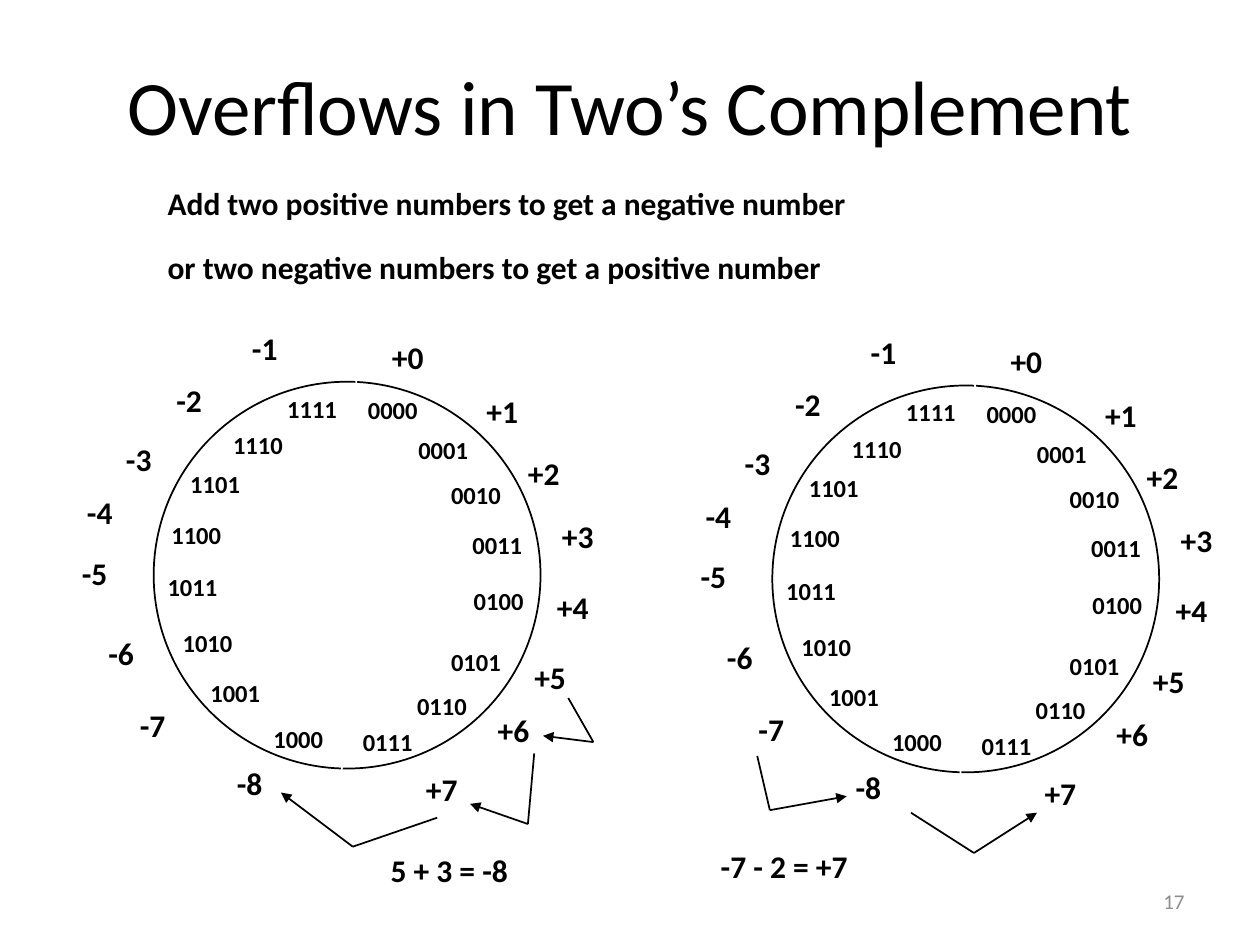
from itertools import pairwise

from lxml import etree
from pptx import Presentation
from pptx.dml.color import RGBColor
from pptx.enum.shapes import MSO_CONNECTOR, MSO_SHAPE
from pptx.enum.text import MSO_ANCHOR, MSO_AUTO_SIZE, PP_ALIGN
from pptx.oxml.ns import qn
from pptx.util import Inches, Pt

BLACK = RGBColor(0, 0, 0)
WHITE = RGBColor(255, 255, 255)
GRAY = RGBColor(0x8C, 0x8C, 0x8C)
LINE = MSO_CONNECTOR.STRAIGHT
OVAL = MSO_SHAPE.OVAL
LEFT, CENTER, RIGHT = PP_ALIGN.LEFT, PP_ALIGN.CENTER, PP_ALIGN.RIGHT
TOP, MIDDLE, BOTTOM = MSO_ANCHOR.TOP, MSO_ANCHOR.MIDDLE, MSO_ANCHOR.BOTTOM
GROW, FIXED = MSO_AUTO_SIZE.SHAPE_TO_FIT_TEXT, MSO_AUTO_SIZE.NONE

TIGHT = {
    "word_wrap": False, "auto_size": GROW, "vertical_anchor": TOP,
    "margin_left": Inches(0.07), "margin_right": Inches(0.07),
    "margin_top": Inches(0.03), "margin_bottom": Inches(0.03),
}
WIDE = {"word_wrap": True, "auto_size": FIXED}
BOLD = {"name": "Calibri", "size": Pt(18), "bold": True}
SMALL = BOLD | {"size": Pt(14)}
HEAD = {"name": "Calibri", "size": Pt(44)}
PAGE = {"name": "Calibri", "size": Pt(12)}
DENSE = {"alignment": LEFT, "line_spacing": 0.85}
LOOSE = {"alignment": LEFT, "line_spacing": 0.9}

# Each row: value, left and top of its code, left and top of its label.
MARKS = [
    (0, 2.85, 3.13, 3.04, 2.7), (1, 3.25, 3.45, 3.79, 3.13),
    (2, 3.51, 3.81, 4.12, 3.62), (3, 3.68, 4.2, 4.39, 4.12),
    (4, 3.69, 4.65, 4.35, 4.68), (5, 3.51, 5.13, 4.17, 5.24),
    (6, 3.24, 5.48, 3.88, 5.66), (7, 2.81, 5.77, 3.31, 6.13),
    (-8, 2.1, 5.74, 1.81, 6.08), (-7, 1.6, 5.38, 1.04, 5.62),
    (-6, 1.38, 4.98, 0.79, 5.05), (-5, 1.26, 4.54, 0.58, 4.41),
    (-4, 1.29, 4.12, 0.62, 3.93), (-3, 1.44, 3.72, 0.93, 3.51),
    (-2, 1.78, 3.41, 1.33, 3.04), (-1, 2.21, 3.12, 1.93, 2.63),
]
WHEELS = [(0, 0), (4.91, 0.03)]
HOPS = [
    [(4.51, 5.54), (4.71, 5.89), (4.31, 5.84)],
    [(4.24, 5.98), (4.19, 6.54), (3.73, 6.38)],
    [(3.47, 6.49), (2.8, 6.72), (2.23, 6.29)],
    [(6.01, 6), (6.11, 6.43), (6.72, 6.32)],
    [(7.23, 6.45), (7.73, 6.77), (8.23, 6.45)],
]


def assign(item, values):
    """Set each named attribute of an item."""
    for name, value in values.items():
        setattr(item, name, value)


def add_text(slide, box, lines, font, para=DENSE, frame=TIGHT, color=BLACK):
    """Add a text box with one paragraph per line."""
    text = slide.shapes.add_textbox(*map(Inches, box)).text_frame
    text.text = "\n".join(lines)
    assign(text, frame)
    for item in text.paragraphs:
        assign(item, para)
        for run in item.runs:
            assign(run.font, font)
            run.font.color.rgb = color
    return text


def add_line(slide, start, end, color=BLACK, arrow=False):
    """Add a thin straight line, with an arrowhead at its end if asked."""
    line = slide.shapes.add_connector(LINE, *map(Inches, (*start, *end)))
    line.line.color.rgb = color
    line.line.width = Pt(1)
    if arrow:
        etree.SubElement(line.line._get_or_add_ln(), qn("a:tailEnd"), type="triangle")
    etree.SubElement(line._element.spPr, qn("a:effectLst"))


def add_hop(slide, points):
    """Add a bent arrow through the points."""
    for start, end in pairwise(points):
        add_line(slide, start, end, arrow=end == points[-1])


def add_wheel(slide, dx, dy):
    """Add a number wheel with codes inside and values outside."""
    ring = slide.shapes.add_shape(OVAL, *map(Inches, (1.22 + dx, 3.03 + dy, 3.07, 3.07)))
    ring.shadow.inherit = False
    ring.fill.background()
    ring.line.color.rgb = BLACK
    ring.line.width = Pt(1)
    add_line(slide, (2.84 + dx, 2.7 + dy), (2.7 + dx, 6.46 + dy), WHITE)
    for value, left, top, x, y in MARKS:
        code = f"{value % 16:04b}"
        wide = 0.36 if value < 0 else 0.42
        add_text(slide, (left + dx, top + dy, 0.57, 0.27), [code], SMALL, LOOSE)
        add_text(slide, (x + dx, y + dy, wide, 0.31), [f"{value:+d}"], BOLD)


def main():
    """Build the slide and save it."""
    deck = Presentation()
    deck.slide_width, deck.slide_height = Inches(10), Inches(7.5)
    slide = deck.slides.add_slide(deck.slide_layouts[6])
    add_text(slide, (7.17, 6.95, 2.33, 0.4), ["17"], PAGE, {"alignment": RIGHT},
             WIDE | {"vertical_anchor": MIDDLE}, GRAY)
    add_text(slide, (0.5, 0, 9, 1.25), ["Overflows in Two’s Complement"], HEAD,
             {"alignment": CENTER}, WIDE | {"vertical_anchor": BOTTOM})
    rule = add_text(slide, (1.26, 1.48, 6.29, 0.82),
                    ["Add two positive numbers to get a negative number",
                     "or two negative numbers to get a positive number"], BOLD)
    rule.paragraphs[1].space_before = Pt(18)
    for points in HOPS:
        add_hop(slide, points)
    add_text(slide, (3.03, 6.77, 1.21, 0.31), ["5 + 3 = -8"], BOLD)
    add_text(slide, (5.65, 6.74, 1.29, 0.31), ["-7 - 2 = +7"], BOLD)
    for dx, dy in WHEELS:
        add_wheel(slide, dx, dy)
    deck.save("out.pptx")


if __name__ == "__main__":
    main()
